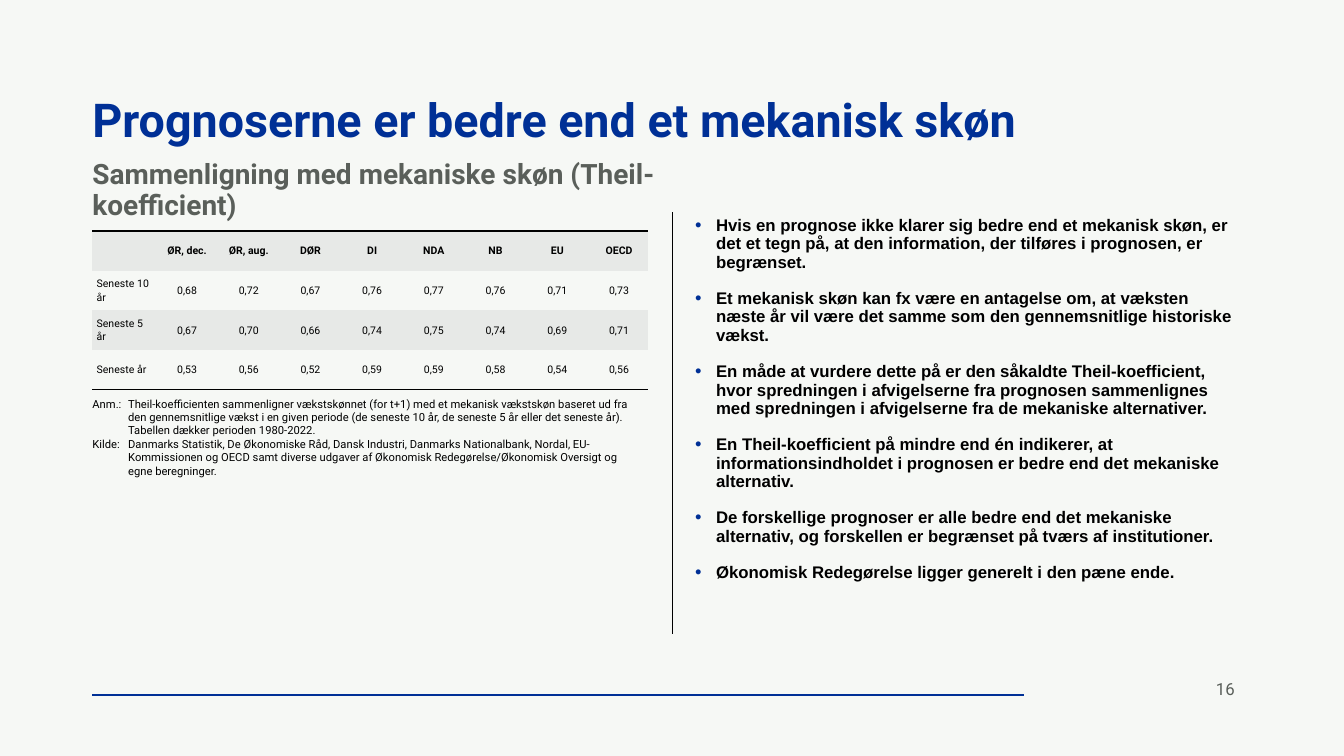
from dataclasses import dataclass, field
from typing import Any

from lxml import etree
from pptx import Presentation, util as u
from pptx.dml.color import RGBColor
from pptx.enum import shapes, text
from pptx.oxml import ns

SCALE = 9525  # EMU per px
BLUE, GREY, BLACK = "003096", "5A5F5A", "000000"
PAPER, BAND = "F6F8F5", "E7E9E7"
NO_STYLE_NO_GRID = "{2D5ABB26-0587-4C30-8999-92F81FD0307C}"
LEFT_MARGIN = 88


@dataclass
class Box:
    left: int
    top: int
    width: int
    height: int


@dataclass
class Style:
    size: float
    colour: str = BLACK
    bold: bool = False
    font: str = "Roboto"
    spacing: float = 1.0
    gap: float = 0
    margin: int = 0
    hanging: int = 0
    bullet: str = ""
    align: Any = text.PP_ALIGN.LEFT


@dataclass
class TextBlock:
    box: Box
    style: Style
    paragraphs: list[str]
    insets: tuple[int, int, int, int] = (0, 5, 0, 5)
    anchor: Any = text.MSO_ANCHOR.TOP


@dataclass
class Rule:
    start: tuple[int, int]
    end: tuple[int, int]
    width: float
    colour: str = field(default=BLACK)


RULES = [
    Rule((LEFT_MARGIN, 662), (975, 662), 1, BLUE),
    Rule((640, 202), (640, 604), 0.5),
]
TITLE = TextBlock(
    Box(LEFT_MARGIN, 88, 1104, 62),
    Style(33.3, BLUE, True, spacing=0.9),
    ["Prognoserne er bedre end et mekanisk skøn"],
)
BLOCKS = [
    TextBlock(Box(1146, 637, 60, 38), Style(12, GREY), ["16"],
              (12, 7, 12, 7), text.MSO_ANCHOR.MIDDLE),
    TextBlock(Box(LEFT_MARGIN, 148, 546, 59), Style(20, GREY, True, spacing=0.9),
              ["Sammenligning med mekaniske skøn (Theil-koefficient)"]),
    TextBlock(Box(LEFT_MARGIN, 378, 522, 78), Style(8, margin=34, hanging=34), [
        "Anm.:\tTheil-koefficienten sammenligner vækstskønnet (for t+1) med et mekanisk "
        "vækstskøn baseret ud fra den gennemsnitlige vækst i en given periode (de seneste "
        "10 år, de seneste 5 år eller det seneste år). Tabellen dækker perioden 1980-2022.",
        "Kilde:\tDanmarks Statistik, De Økonomiske Råd, Dansk Industri, Danmarks "
        "Nationalbank, Nordal, EU-Kommissionen og OECD samt diverse udgaver af Økonomisk "
        "Redegørelse/Økonomisk Oversigt og egne beregninger.",
    ], (0, 0, 0, 0)),
    TextBlock(Box(662, 202, 529, 396), Style(
        12, bold=True, font="Arial", spacing=0.9, gap=13.3, margin=20, hanging=20, bullet="•",
    ), [
        "Hvis en prognose ikke klarer sig bedre end et mekanisk skøn, er det et tegn på, "
        "at den information, der tilføres i prognosen, er begrænset.",
        "Et mekanisk skøn kan fx være en antagelse om, at væksten næste år vil være det "
        "samme som den gennemsnitlige historiske vækst.",
        "En måde at vurdere dette på er den såkaldte Theil-koefficient, hvor spredningen i "
        "afvigelserne fra prognosen sammenlignes med spredningen i afvigelserne fra de "
        "mekaniske alternativer.",
        "En Theil-koefficient på mindre end én indikerer, at informationsindholdet i "
        "prognosen er bedre end det mekaniske alternativ.",
        "De forskellige prognoser er alle bedre end det mekaniske alternativ, og forskellen "
        "er begrænset på tværs af institutioner.",
        "Økonomisk Redegørelse ligger generelt i den pæne ende.",
    ], (0, 5, 10, 5)),
]
TABLE_BOX = Box(LEFT_MARGIN, 220, 529, 151)
TABLE_ROWS = [
    ["", "ØR, dec.", "ØR, aug.", "DØR", "DI", "NDA", "NB", "EU", "OECD"],
    ["Seneste 10 år", "0,68", "0,72", "0,67", "0,76", "0,77", "0,76", "0,71", "0,73"],
    ["Seneste 5 år", "0,67", "0,70", "0,66", "0,74", "0,75", "0,74", "0,69", "0,71"],
    ["Seneste år", "0,53", "0,56", "0,52", "0,59", "0,59", "0,58", "0,54", "0,56"],
]


def px(length: int) -> u.Emu:
    return u.Emu(length * SCALE)


def bounds(box: Box) -> list[u.Emu]:
    return [px(length) for length in (box.left, box.top, box.width, box.height)]


def rgb(colour: str) -> RGBColor:
    return RGBColor.from_string(colour)


def assign(target: Any, values: dict[str, Any]) -> None:
    for name, value in values.items():
        setattr(target, name, value)


def add_xml(parent: Any, tag: str, **attributes: str) -> Any:
    return etree.SubElement(parent, ns.qn(tag), attributes)


def write_paragraph(paragraph: Any, content: str, style: Style, first: bool = True) -> None:
    properties = paragraph._p.get_or_add_pPr()
    properties.set("marL", str(px(style.margin)))
    properties.set("indent", str(px(-style.hanging)))
    if style.bullet:
        add_xml(add_xml(properties, "a:buClr"), "a:srgbClr", val=BLUE)
        add_xml(properties, "a:buSzPct", val="110000")
        add_xml(properties, "a:buFont", typeface=style.font)
        add_xml(properties, "a:buChar", char=style.bullet)
    assign(paragraph, {
        "alignment": style.align,
        "line_spacing": style.spacing,
        "space_before": u.Pt(0 if first else style.gap),
    })
    if content:
        run = paragraph.add_run()
        run.text = content
        assign(run.font, {"name": style.font, "size": u.Pt(style.size), "bold": style.bold})
        run.font.color.rgb = rgb(style.colour)


def fill_block(shape: Any, block: TextBlock) -> None:
    left, top, right, bottom = map(px, block.insets)
    frame = shape.text_frame
    assign(frame, {
        "word_wrap": True, "auto_size": text.MSO_AUTO_SIZE.NONE,
        "vertical_anchor": block.anchor, "margin_left": left, "margin_top": top,
        "margin_right": right, "margin_bottom": bottom,
    })
    for index, content in enumerate(block.paragraphs):
        paragraph = frame.add_paragraph() if index else frame.paragraphs[0]
        write_paragraph(paragraph, content, block.style, first=index == 0)


def add_rule(slide: Any, rule: Rule) -> None:
    connector = slide.shapes.add_connector(
        shapes.MSO_CONNECTOR.STRAIGHT, *map(px, rule.start + rule.end))
    connector.line.width = u.Pt(rule.width)
    connector.line.color.rgb = rgb(rule.colour)
    add_xml(connector._element.spPr, "a:effectLst")


def add_border(cell: Any, tag: str) -> None:
    border = add_xml(cell._tc.get_or_add_tcPr(), tag, w=str(u.Pt(1)))
    add_xml(add_xml(border, "a:solidFill"), "a:srgbClr", val=BLACK)


def add_theil_table(slide: Any) -> None:
    row_count, column_count = len(TABLE_ROWS), len(TABLE_ROWS[0])
    table = slide.shapes.add_table(row_count, column_count, *bounds(TABLE_BOX)).table
    table._tbl.tblPr.find(ns.qn("a:tableStyleId")).text = NO_STYLE_NO_GRID
    assign(table, {"first_row": False, "horz_banding": False})
    for row, contents in enumerate(TABLE_ROWS):
        for column, content in enumerate(contents):
            cell = table.cell(row, column)
            if row == 0:
                add_border(cell, "a:lnT")
            if row == row_count - 1:
                add_border(cell, "a:lnB")
            cell.fill.solid()
            cell.fill.fore_color.rgb = rgb(PAPER if row % 2 else BAND)
            assign(cell, {
                "vertical_anchor": text.MSO_ANCHOR.MIDDLE, "margin_left": 0,
                "margin_right": 0, "margin_top": 0, "margin_bottom": 0,
            })
            align = text.PP_ALIGN.CENTER if column else text.PP_ALIGN.LEFT
            style = Style(7.5, bold=row == 0, spacing=1.07, margin=4, align=align)
            write_paragraph(cell.text_frame.paragraphs[0], content, style)


def main() -> None:
    presentation = Presentation()
    assign(presentation, {"slide_width": px(1280), "slide_height": px(720)})
    slide = presentation.slides.add_slide(presentation.slide_layouts[5])
    slide.background.fill.solid()
    slide.background.fill.fore_color.rgb = rgb(PAPER)

    title = slide.shapes.title
    assign(title, dict(zip(("left", "top", "width", "height"), bounds(TITLE.box))))
    fill_block(title, TITLE)
    for rule in RULES:
        add_rule(slide, rule)
    add_theil_table(slide)
    for block in BLOCKS:
        fill_block(slide.shapes.add_textbox(*bounds(block.box)), block)
    presentation.save("out.pptx")


if __name__ == "__main__":
    main()
